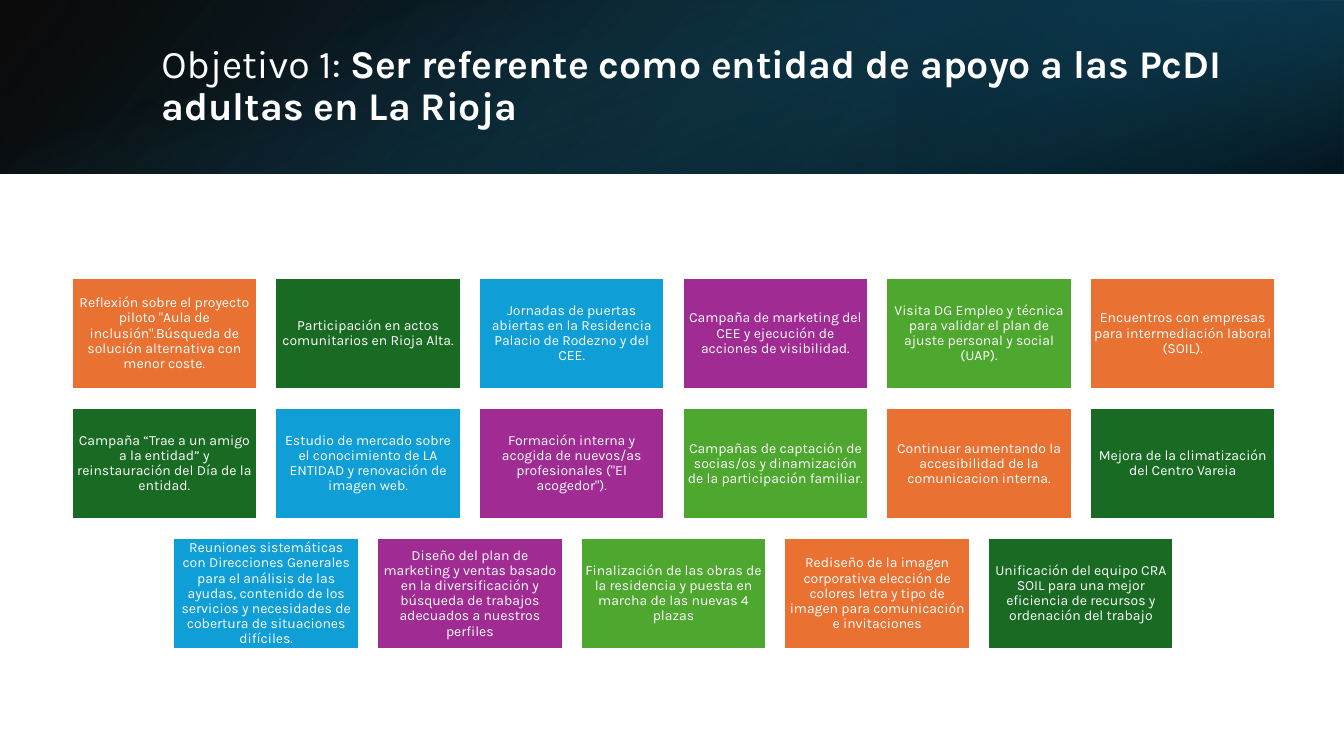
from lxml import etree
from pptx import Presentation
from pptx.dml.color import RGBColor
from pptx.enum import shapes, text
from pptx.oxml import ns
from pptx.util import Inches, Pt


def rgb(value):
    return RGBColor.from_string(value)


def write_text(shape, runs, size, align, margins):
    """Fill a shape with one paragraph made of (text, bold) runs."""
    frame = shape.text_frame
    frame.word_wrap = True
    frame.auto_size = text.MSO_AUTO_SIZE.NONE
    frame.vertical_anchor = text.MSO_ANCHOR.MIDDLE
    frame.margin_left = frame.margin_right = Inches(margins[0])
    frame.margin_top = frame.margin_bottom = Inches(margins[1])
    paragraph = frame.paragraphs[0]
    paragraph.alignment = align
    paragraph.line_spacing = 0.9
    for content, bold in runs:
        run = paragraph.add_run()
        run.text = content
        run.font.name = "Karla"
        run.font.size = Pt(size)
        run.font.bold = bold
        run.font.color.rgb = rgb("FFFFFF")


presentation = Presentation()
presentation.slide_width = Inches(13.33)
presentation.slide_height = Inches(7.5)
slide = presentation.slides.add_slide(presentation.slide_layouts[5])

# Header: three translucent gradients; stops are (position %, colour, opacity %)
header_bands = [
    ((0, 0, 13.33, 1.72), 0, True, 140, [(0, "000000", 96), (100, "104862", 100)]),
    ((8.89, 0, 4.44, 1.72), 180, True, 320, [(19, "0B3041", 68), (100, "156082", 79)]),
    ((5.8, -5.8, 1.72, 13.33), 90, False, 340, [(23, "156082", 0), (99, "000000", 74)]),
]
for place, rotation, flipped, angle, stops in header_bands:
    band = slide.shapes.add_shape(shapes.MSO_SHAPE.RECTANGLE, *map(Inches, place))
    band.shadow.inherit = False
    band.line.fill.background()
    band.rotation = rotation
    properties = band._element.spPr
    if flipped:
        properties.find(ns.qn("a:xfrm")).set("flipH", "1")
    gradient = etree.Element(ns.qn("a:gradFill"), rotWithShape="1")
    stop_list = etree.SubElement(gradient, ns.qn("a:gsLst"))
    for position, colour, opacity in stops:
        stop = etree.SubElement(stop_list, ns.qn("a:gs"), pos=str(position * 1000))
        stop_colour = etree.SubElement(stop, ns.qn("a:srgbClr"), val=colour)
        etree.SubElement(stop_colour, ns.qn("a:alpha"), val=str(opacity * 1000))
    etree.SubElement(gradient, ns.qn("a:lin"), ang=str(angle * 60000), scaled="0")
    properties.find(ns.qn("a:prstGeom")).addnext(gradient)

title = slide.shapes.title
title.left, title.top, title.width, title.height = map(Inches, (1.5, 0.38, 10.98, 0.96))
write_text(
    title,
    [("Objetivo 1: ", False),
     ("Ser referente como entidad de apoyo a las PcDI adultas en La Rioja", True)],
    size=28, align=text.PP_ALIGN.LEFT, margins=(0.1, 0.05),
)
slide.shapes._spTree.append(title._element)  # bring the title in front of the header

# Action cards: centred rows, colours cycling from card to card
card_colours = ["E97132", "196B24", "0F9ED5", "A02B93", "4EA72E"]
card_rows = [
    ['Reflexión sobre el proyecto piloto "Aula de inclusión".Búsqueda de solución '
     "alternativa con menor coste.",
     "Participación en actos comunitarios en Rioja Alta.",
     "Jornadas de puertas abiertas en la Residencia Palacio de Rodezno y del CEE.",
     "Campaña de marketing del CEE y ejecución de acciones de visibilidad.",
     "Visita DG Empleo y técnica para validar el plan de ajuste personal y social (UAP).",
     "Encuentros con empresas para intermediación laboral (SOIL)."],
    ["Campaña “Trae a un amigo a la entidad” y reinstauración del Día de la entidad.",
     "Estudio de mercado sobre el conocimiento de LA ENTIDAD y renovación de imagen web.",
     'Formación interna y acogida de nuevos/as profesionales ("El acogedor").',
     "Campañas de captación de socias/os y dinamización de la participación familiar.",
     "Continuar aumentando la accesibilidad de la comunicacion interna.",
     "Mejora de la climatización del Centro Vareia"],
    ["Reuniones sistemáticas con Direcciones Generales para el análisis de las ayudas, "
     "contenido de los servicios y necesidades de cobertura de situaciones difíciles.",
     "Diseño del plan de marketing y ventas basado en la diversificación y búsqueda de "
     "trabajos adecuados a nuestros perfiles",
     "Finalización de las obras de la residencia y puesta en marcha de las nuevas 4 plazas",
     "Rediseño de la imagen corporativa elección de colores letra y tipo de imagen para "
     "comunicación e invitaciones",
     "Unificación del equipo CRA SOIL para una mejor eficiencia de recursos y ordenación "
     "del trabajo"],
]
card_width, card_height = 1.84, 1.1
column_step, row_step = 2.02, 1.29
rows_centre, rows_top = 6.68, 2.76
card_number = 0
for row, actions in enumerate(card_rows):
    row_width = (len(actions) - 1) * column_step + card_width
    for column, action in enumerate(actions):
        card = slide.shapes.add_shape(
            shapes.MSO_SHAPE.RECTANGLE,
            Inches(rows_centre - row_width / 2 + column * column_step),
            Inches(rows_top + row * row_step),
            Inches(card_width), Inches(card_height),
        )
        card.shadow.inherit = False
        card.fill.solid()
        card.fill.fore_color.rgb = rgb(card_colours[card_number % len(card_colours)])
        card.line.color.rgb = rgb("FFFFFF")
        card.line.width = Pt(1.5)
        write_text(card, [(action, False)], size=10,
                   align=text.PP_ALIGN.CENTER, margins=(0.04, 0.04))
        card_number += 1

presentation.save("out.pptx")
